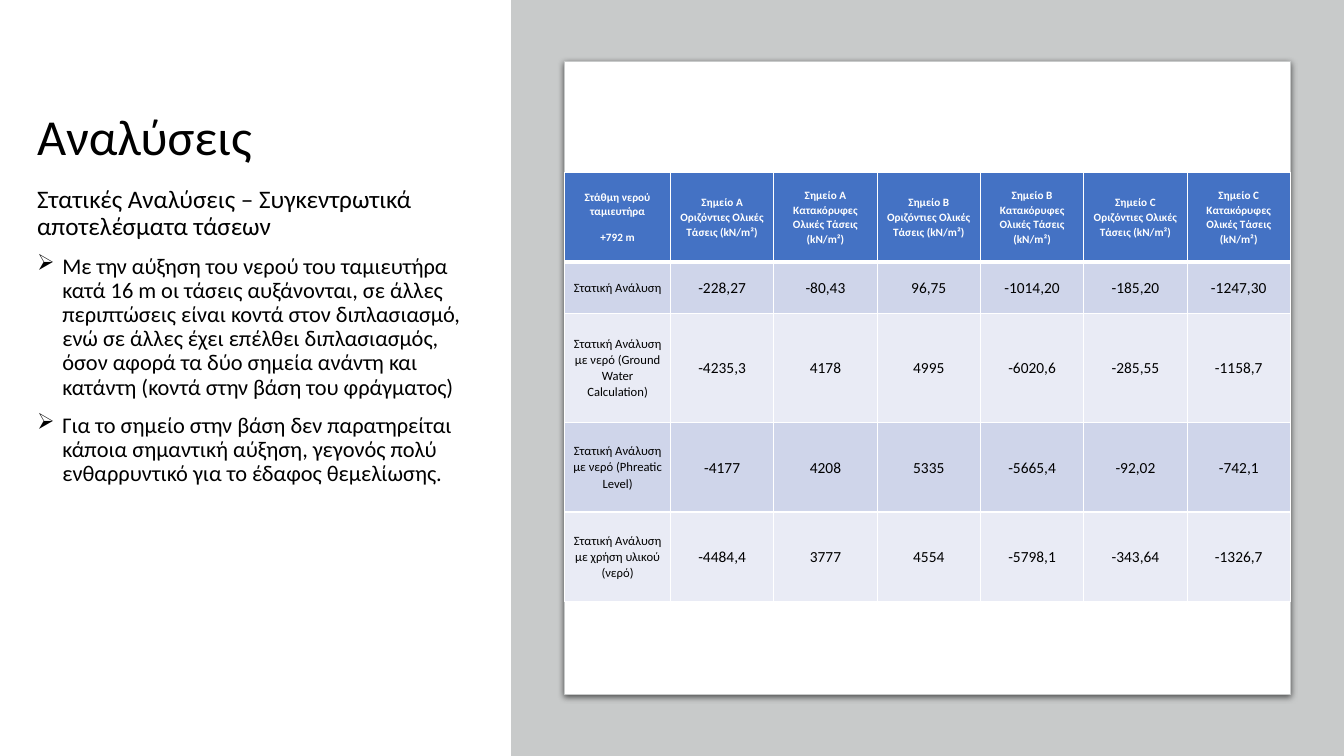
from dataclasses import dataclass

from lxml import etree
from pptx import Presentation
from pptx import util as u
from pptx.dml.color import RGBColor
from pptx.enum import shapes, text
from pptx.oxml import ns

BLACK = RGBColor(0x00, 0x00, 0x00)
WHITE = RGBColor(0xFF, 0xFF, 0xFF)
GREY = RGBColor(0xC8, 0xCA, 0xCA)
BLUE = RGBColor(0x44, 0x72, 0xC4)
BANDS = (RGBColor(0xCF, 0xD5, 0xEA), RGBColor(0xE9, 0xEB, 0xF5))
FONT = "Calibri"


@dataclass
class Box:
    left: float
    top: float
    width: float
    height: float

    def place(self) -> tuple:
        return tuple(map(u.Inches, (self.left, self.top, self.width, self.height)))


@dataclass
class Para:
    words: str
    size: float
    bullet: bool = False


@dataclass
class Row:
    label: str
    height: float
    values: tuple


TITLE = Box(0.27, 0.61, 3.76, 1.55)
BODY = Box(0.27, 1.8, 4.49, 4.31)
PANEL = Box(5.07, 0, 8.26, 7.5)
CARD = Box(5.6, 0.61, 7.2, 6.28)
GRID = Box(5.6, 1.71, 7.2, 4.26)
FIRST_COL = 1.05
HEAD_ROW = 0.89

POINTS = [
    Para("Στατικές Αναλύσεις – Συγκεντρωτικά αποτελέσματα τάσεων", 18),
    Para("Με την αύξηση του νερού του ταμιευτήρα κατά 16 m οι τάσεις αυξάνονται, "
         "σε άλλες περιπτώσεις είναι κοντά στον διπλασιασμό, ενώ σε άλλες έχει "
         "επέλθει διπλασιασμός, όσον αφορά τα δύο σημεία ανάντη και κατάντη "
         "(κοντά στην βάση του φράγματος)", 16, True),
    Para("Για το σημείο στην βάση δεν παρατηρείται κάποια σημαντική αύξηση, "
         "γεγονός πολύ ενθαρρυντικό για το έδαφος θεμελίωσης.", 16, True),
]
HEADS = [["Στάθμη νερού ταμιευτήρα", "+792 m"]] + [
    [f"Σημείο {point} {axis} Ολικές Τάσεις (kN/m²)"]
    for point in "ΑΒC" for axis in ("Οριζόντιες", "Κατακόρυφες")
]
ROWS = [
    Row("Στατική Ανάλυση", 0.51,
        ("-228,27", "-80,43", "96,75", "-1014,20", "-185,20", "-1247,30")),
    Row("Στατική Ανάλυση με νερό (Ground Water Calculation)", 1.08,
        ("-4235,3", "4178", "4995", "-6020,6", "-285,55", "-1158,7")),
    Row("Στατική Ανάλυση με νερό (Phreatic Level)", 0.89,
        ("-4177", "4208", "5335", "-5665,4", "-92,02", "-742,1")),
    Row("Στατική Ανάλυση με χρήση υλικού (νερό)", 0.89,
        ("-4484,4", "3777", "4554", "-5798,1", "-343,64", "-1326,7")),
]


def add_node(parent, tag: str, **attrs):
    """Append a DrawingML element with the given attributes."""
    names = {key: str(val) for key, val in attrs.items()}
    return etree.SubElement(parent, ns.qn(tag), names)


def add_run(para, words: str, size: float, color=BLACK, bold: bool = False) -> None:
    run = para.add_run()
    run.text = words
    run.font.name = FONT
    run.font.size = u.Pt(size)
    run.font.bold = bold
    run.font.color.rgb = color


def add_text(slide, box: Box, paras: list, anchor) -> None:
    frame = slide.shapes.add_textbox(*box.place()).text_frame
    frame.word_wrap = True
    frame.vertical_anchor = anchor
    for i, item in enumerate(paras):
        para = frame.add_paragraph() if i else frame.paragraphs[0]
        if item.bullet:
            props = para._p.get_or_add_pPr()
            props.set("marL", str(u.Inches(0.25)))
            props.set("indent", str(u.Inches(-0.25)))
            add_node(props, "a:buChar", char="➢")
        para.line_spacing = 0.9
        if i:
            para.space_before = u.Pt(10)
        add_run(para, item.words, item.size)


def add_block(slide, box: Box, kind, fill: RGBColor):
    block = slide.shapes.add_shape(kind, *box.place())
    block.shadow.inherit = False
    block.fill.solid()
    block.fill.fore_color.rgb = fill
    block.line.fill.background()
    return block


def add_card(slide) -> None:
    card = add_block(slide, CARD, shapes.MSO_SHAPE.ROUNDED_RECTANGLE, WHITE)
    card.adjustments[0] = 0
    card.line.color.rgb = GREY
    card.line.width = u.Pt(0.75)
    effects = card._element.spPr.find(ns.qn("a:effectLst"))
    shade = add_node(effects, "a:outerShdw", blurRad=u.Pt(4.5), dist=u.Pt(1.5),
                     dir=90 * 60000, algn="ctr", rotWithShape=0)
    color = add_node(shade, "a:srgbClr", val=BLACK)
    add_node(color, "a:alpha", val=63000)


def fill_cell(cell, lines: list, size: float, fill: RGBColor, edges: dict,
              color=BLACK, bold: bool = False) -> None:
    props = cell._tc.get_or_add_tcPr()
    for side, width in edges.items():
        line = add_node(props, f"a:ln{side}", w=u.Pt(width))
        add_node(add_node(line, "a:solidFill"), "a:srgbClr", val=WHITE)
    cell.fill.solid()
    cell.fill.fore_color.rgb = fill
    cell.vertical_anchor = text.MSO_ANCHOR.MIDDLE
    cell.margin_left = cell.margin_right = u.Inches(0.07)
    cell.margin_top = cell.margin_bottom = u.Inches(0.04)
    for i, words in enumerate(lines):
        para = cell.text_frame.add_paragraph() if i else cell.text_frame.paragraphs[0]
        para.alignment = text.PP_ALIGN.CENTER
        para.line_spacing = 1.06
        para.space_after = u.Pt(8)
        add_run(para, words, size, color, bold)


def add_grid(slide) -> None:
    count = len(HEADS)
    grid = slide.shapes.add_table(len(ROWS) + 1, count, *GRID.place()).table
    other = (GRID.width - FIRST_COL) / (count - 1)
    for i, col in enumerate(grid.columns):
        col.width = u.Inches(other if i else FIRST_COL)
    for row, high in zip(grid.rows, [HEAD_ROW] + [r.height for r in ROWS]):
        row.height = u.Inches(high)

    thin = dict.fromkeys("LRTB", 1)
    for i, lines in enumerate(HEADS):
        fill_cell(grid.cell(0, i), lines, 8, BLUE, thin | {"B": 3}, WHITE, True)
    for r, row in enumerate(ROWS):
        edges = thin if r else thin | {"T": 3}
        for c, words in enumerate((row.label, *row.values)):
            fill_cell(grid.cell(r + 1, c), [words], 11 if c else 9, BANDS[r % 2], edges)


def main() -> None:
    deck = Presentation()
    deck.slide_width = u.Inches(13.33)
    deck.slide_height = u.Inches(7.5)
    slide = deck.slides.add_slide(deck.slide_layouts[6])
    add_text(slide, TITLE, [Para("Αναλύσεις", 36)], text.MSO_ANCHOR.MIDDLE)
    add_text(slide, BODY, POINTS, text.MSO_ANCHOR.TOP)
    add_block(slide, PANEL, shapes.MSO_SHAPE.RECTANGLE, GREY)
    add_card(slide)
    add_grid(slide)
    deck.save("out.pptx")


if __name__ == "__main__":
    main()
